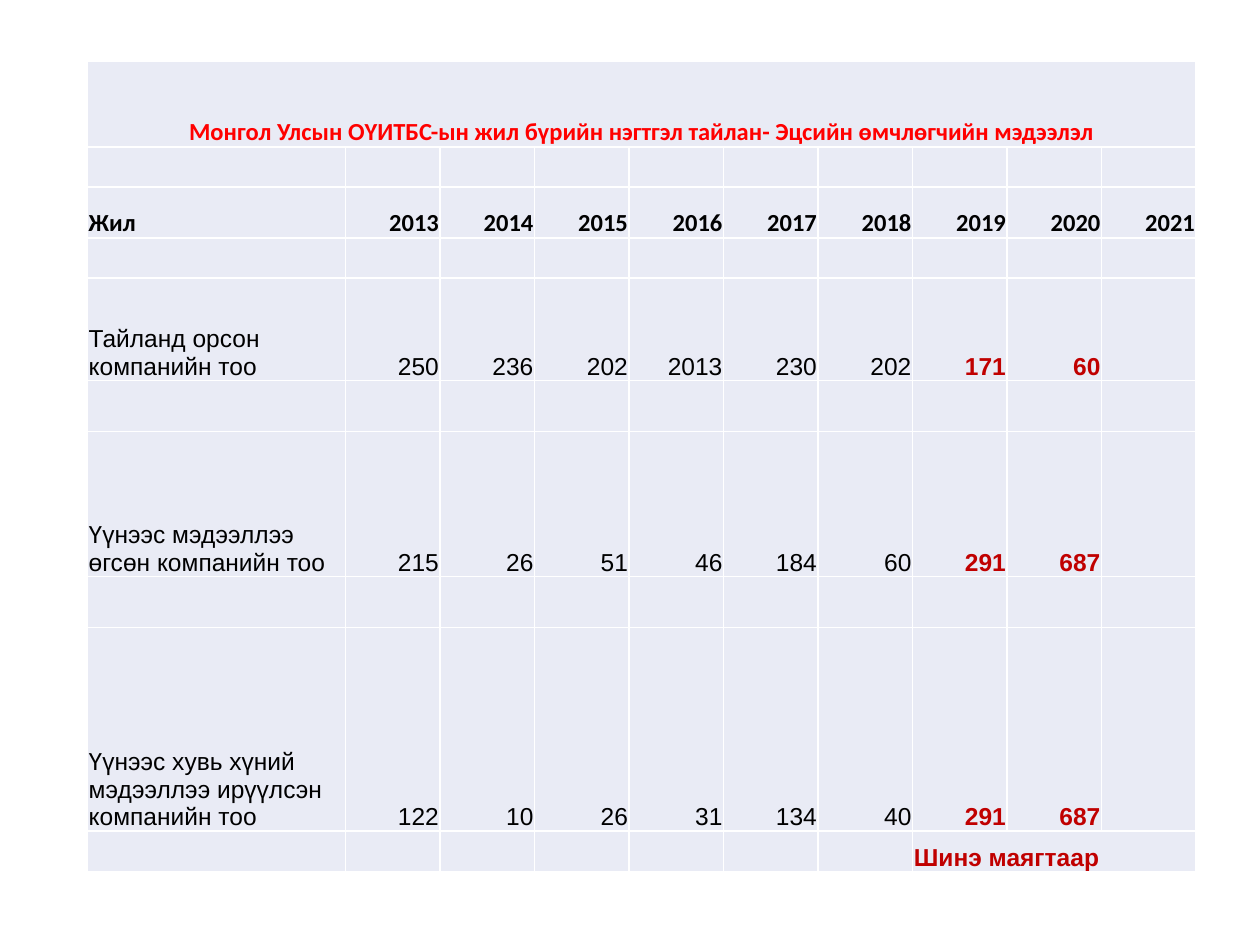
from lxml.etree import SubElement
from pptx import Presentation
from pptx.dml.color import RGBColor
from pptx.enum.text import MSO_ANCHOR, PP_ALIGN
from pptx.oxml.ns import qn
from pptx.util import Pt

BLACK = RGBColor(0x00, 0x00, 0x00)
RED = RGBColor(0xFF, 0x00, 0x00)
DARK_RED = RGBColor(0xC0, 0x00, 0x00)
PALE_BLUE = RGBColor(0xE9, 0xEB, 0xF5)
WHITE = RGBColor(0xFF, 0xFF, 0xFF)

TITLE = "Монгол Улсын ОҮИТБС-ын жил бүрийн нэгтгэл тайлан- Эцсийн өмчлөгчийн мэдээлэл"
YEARS = range(2013, 2022)
NEW_FORM_YEARS = (2019, 2020)
NEW_FORM_COLUMN = 7
COMPANY_COUNTS = {
    4: ("Тайланд орсон компанийн тоо",
        (250, 236, 202, 2013, 230, 202, 171, 60)),
    6: ("Үүнээс мэдээллээ өгсөн компанийн тоо",
        (215, 26, 51, 46, 184, 60, 291, 687)),
    8: ("Үүнээс хувь хүний мэдээллээ ирүүлсэн компанийн тоо",
        (122, 10, 26, 31, 134, 40, 291, 687)),
}

LABEL_WIDTH = 147.5
YEAR_WIDTH = 54
ROW_HEIGHTS = (49, 23, 29, 23, 58.5, 29, 83, 29, 116.5, 23.2)


def add_border(cell):
    properties = cell._tc.get_or_add_tcPr()
    for position, side in enumerate(("a:lnL", "a:lnR", "a:lnT", "a:lnB")):
        line = SubElement(properties, qn(side), w=str(Pt(1)))
        fill = SubElement(line, qn("a:solidFill"))
        SubElement(fill, qn("a:srgbClr"), val=str(WHITE))
        properties.insert(position, line)


def style_cell(cell):
    cell.fill.solid()
    cell.fill.fore_color.rgb = PALE_BLUE
    cell.vertical_anchor = MSO_ANCHOR.BOTTOM
    cell.margin_left = cell.margin_right = cell.margin_top = Pt(0.7)
    cell.margin_bottom = Pt(0)
    add_border(cell)


def write_cell(cell, text, align=PP_ALIGN.LEFT, font="Arial", color=BLACK, bold=False):
    para = cell.text_frame.paragraphs[0]
    para.alignment = align
    span = para.add_run()
    span.text = str(text)
    span.font.name = font
    span.font.size = Pt(14)
    span.font.bold = bold
    span.font.color.rgb = color


def add_empty_table(slide):
    width = LABEL_WIDTH + YEAR_WIDTH * len(YEARS)
    frame = slide.shapes.add_table(len(ROW_HEIGHTS), len(YEARS) + 1, Pt(50), Pt(35),
                                   Pt(width), Pt(sum(ROW_HEIGHTS)))
    table = frame.table
    table.first_row = table.horz_banding = False
    for index, column in enumerate(table.columns):
        column.width = Pt(YEAR_WIDTH if index else LABEL_WIDTH)
    for row, height in zip(table.rows, ROW_HEIGHTS):
        row.height = Pt(height)
    for cell in table.iter_cells():
        style_cell(cell)
    return table


def write_headings(table):
    table.cell(0, 0).merge(table.cell(0, len(YEARS)))
    write_cell(table.cell(0, 0), TITLE, PP_ALIGN.CENTER, "Calibri", RED, True)
    write_cell(table.cell(2, 0), "Жил", font="Calibri", bold=True)
    for column, year in enumerate(YEARS, 1):
        write_cell(table.cell(2, column), year, PP_ALIGN.RIGHT, "Calibri", bold=True)


def write_counts(table):
    for row, (label, counts) in COMPANY_COUNTS.items():
        write_cell(table.cell(row, 0), label)
        for column, (year, count) in enumerate(zip(YEARS, counts), 1):
            is_new = year in NEW_FORM_YEARS
            write_cell(table.cell(row, column), count, PP_ALIGN.RIGHT,
                       color=DARK_RED if is_new else BLACK, bold=is_new)


def write_new_form_note(table):
    last_row = len(ROW_HEIGHTS) - 1
    note = table.cell(last_row, NEW_FORM_COLUMN)
    note.merge(table.cell(last_row, len(YEARS)))
    write_cell(note, "Шинэ маягтаар", color=DARK_RED, bold=True)


def main():
    deck = Presentation()
    deck.slide_width, deck.slide_height = Pt(720), Pt(540)
    slide = deck.slides.add_slide(deck.slide_layouts[6])
    table = add_empty_table(slide)
    write_headings(table)
    write_counts(table)
    write_new_form_note(table)
    deck.save("out.pptx")


if __name__ == "__main__":
    main()
